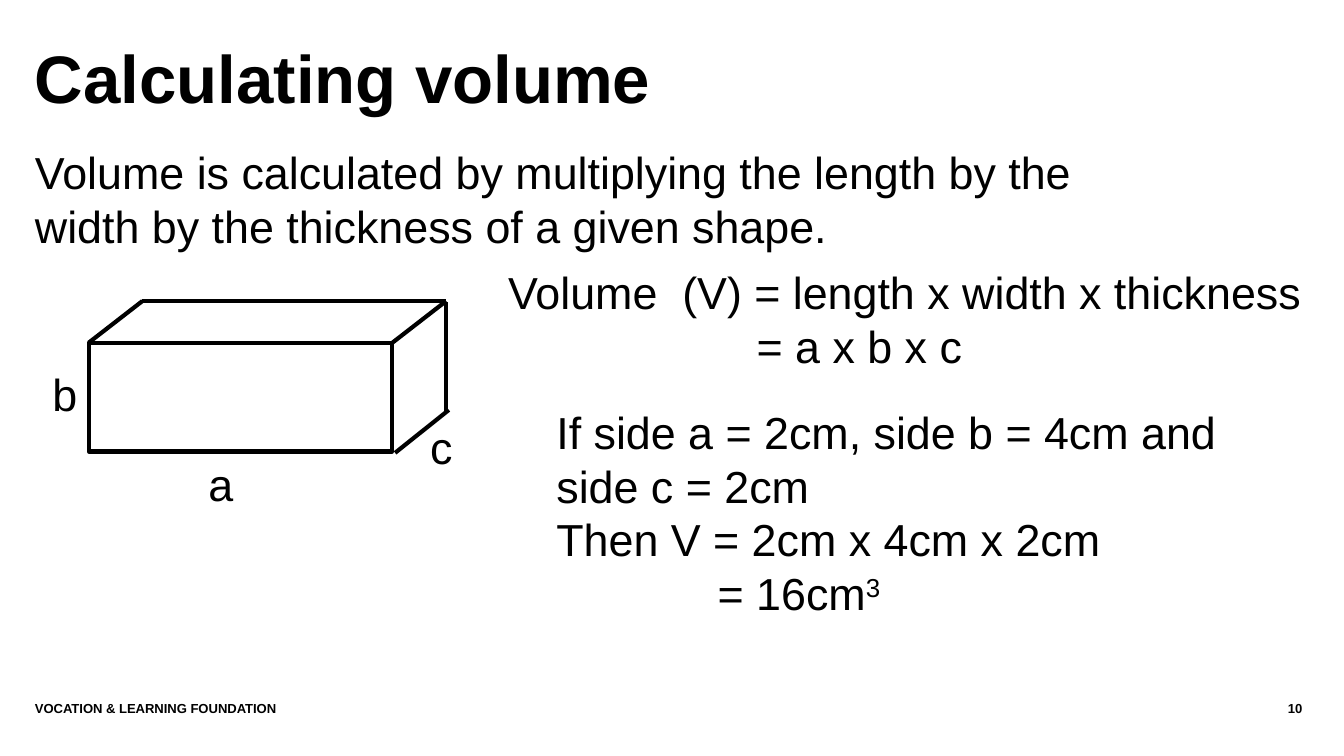
from lxml.etree import SubElement
from pptx import Presentation
from pptx.dml.color import RGBColor
from pptx.enum.shapes import MSO_CONNECTOR, MSO_SHAPE
from pptx.enum.text import PP_ALIGN
from pptx.oxml.ns import qn
from pptx.util import Inches, Pt

BLACK = "000000"
LINE_WIDTH = Pt(2.25)


def color(value):
    return RGBColor.from_string(value)


def add_text(shapes, text, left, top, width, height, size=24, bold=False,
             align=PP_ALIGN.LEFT, indents=None):
    box = shapes.add_textbox(Inches(left), Inches(top), Inches(width), Inches(height))
    frame = box.text_frame
    frame.word_wrap = True
    frame.margin_left = frame.margin_right = frame.margin_top = frame.margin_bottom = 0
    for index, line in enumerate(text.split("\n")):
        paragraph = frame.paragraphs[0] if index == 0 else frame.add_paragraph()
        paragraph.alignment = align
        if indents and index in indents:
            paragraph._p.get_or_add_pPr().set("marL", str(Inches(indents[index])))
        base, _, superscript = line.partition("^")
        for content, raised in ((base, False), (superscript, True)):
            if not content:
                continue
            run = paragraph.add_run()
            run.text = content
            run.font.name = "Arial"
            run.font.size = Pt(size)
            run.font.bold = bold
            run.font.color.rgb = color(BLACK)
            if raised:
                run.font._element.set("baseline", "30000")
    return box


def add_edge(shapes, start, end):
    edge = shapes.add_connector(MSO_CONNECTOR.STRAIGHT,
                                *(Inches(value) for value in (*start, *end)))
    edge.line.color.rgb = color(BLACK)
    edge.line.width = LINE_WIDTH
    SubElement(edge._element.spPr, qn("a:effectLst"))


def add_cuboid(slide, left, top, width, height, depth_x, depth_y):
    shapes = slide.shapes.add_group_shape().shapes
    front_top = top + depth_y
    front_right = left + width
    bottom = front_top + height
    back_left = left + depth_x
    back_right = front_right + depth_x

    front = shapes.add_shape(MSO_SHAPE.RECTANGLE, Inches(left), Inches(front_top),
                             Inches(width), Inches(height))
    front.shadow.inherit = False
    front.fill.background()
    front.line.color.rgb = color(BLACK)
    front.line.width = LINE_WIDTH

    edges = [
        ((left, front_top), (back_left, top)),
        ((back_left, top), (back_right, top)),
        ((front_right, front_top), (back_right, top)),
        ((back_right, bottom - depth_y + 0.02), (back_right, top + 0.01)),
        ((front_right + 0.02, bottom + 0.01), (back_right + 0.02, bottom - depth_y)),
    ]
    for start, end in edges:
        add_edge(shapes, start, end)

    labels = [
        ("b", left - 0.27, front_top + 0.18),
        ("a", left + 0.89, bottom + 0.04),
        ("c", back_right - 0.12, bottom - 0.24),
    ]
    for label, label_left, label_top in labels:
        add_text(shapes, label, label_left, label_top, 0.2, 0.4)


def add_heading(slide, left, top, width):
    add_text(slide.shapes, "Calculating volume", left, top, width, 0.76,
             size=36, bold=True)
    add_text(slide.shapes,
             "Volume is calculated by multiplying the length by the width "
             "by the thickness of a given shape.",
             left, top + 0.81, 8.39, 0.92)


def add_calculation(slide, left, top, width):
    add_text(slide.shapes,
             "Volume  (V) = length x width x thickness\n= a x b x c",
             left, top, width, 0.81, indents={1: 1.85})
    add_text(slide.shapes,
             "If side a = 2cm, side b = 4cm and\nside c = 2cm\n"
             "Then V = 2cm x 4cm x 2cm\n= 16cm^3",
             left + 0.36, top + 1.04, 5.2, 1.62, indents={3: 1.2})


def add_footer(slide, left, top, width):
    number_width = 0.99
    add_text(slide.shapes, "VOCATION & LEARNING FOUNDATION", left, top, 8.41, 0.3,
             size=7, bold=True)
    add_text(slide.shapes, "10", left + width - number_width, top, number_width, 0.3,
             size=7, bold=True, align=PP_ALIGN.RIGHT)


def main():
    presentation = Presentation()
    presentation.slide_width = Inches(10)
    presentation.slide_height = presentation.slide_width * 9 // 16
    slide = presentation.slides.add_slide(presentation.slide_layouts[6])
    add_heading(slide, 0.26, 0.27, 9.23)
    add_cuboid(slide, 0.66, 2.24, 2.26, 0.81, 0.4, 0.31)
    add_calculation(slide, 3.78, 1.97, 6.22)
    add_footer(slide, 0.26, 5.21, 9.43)
    presentation.save("out.pptx")


if __name__ == "__main__":
    main()
